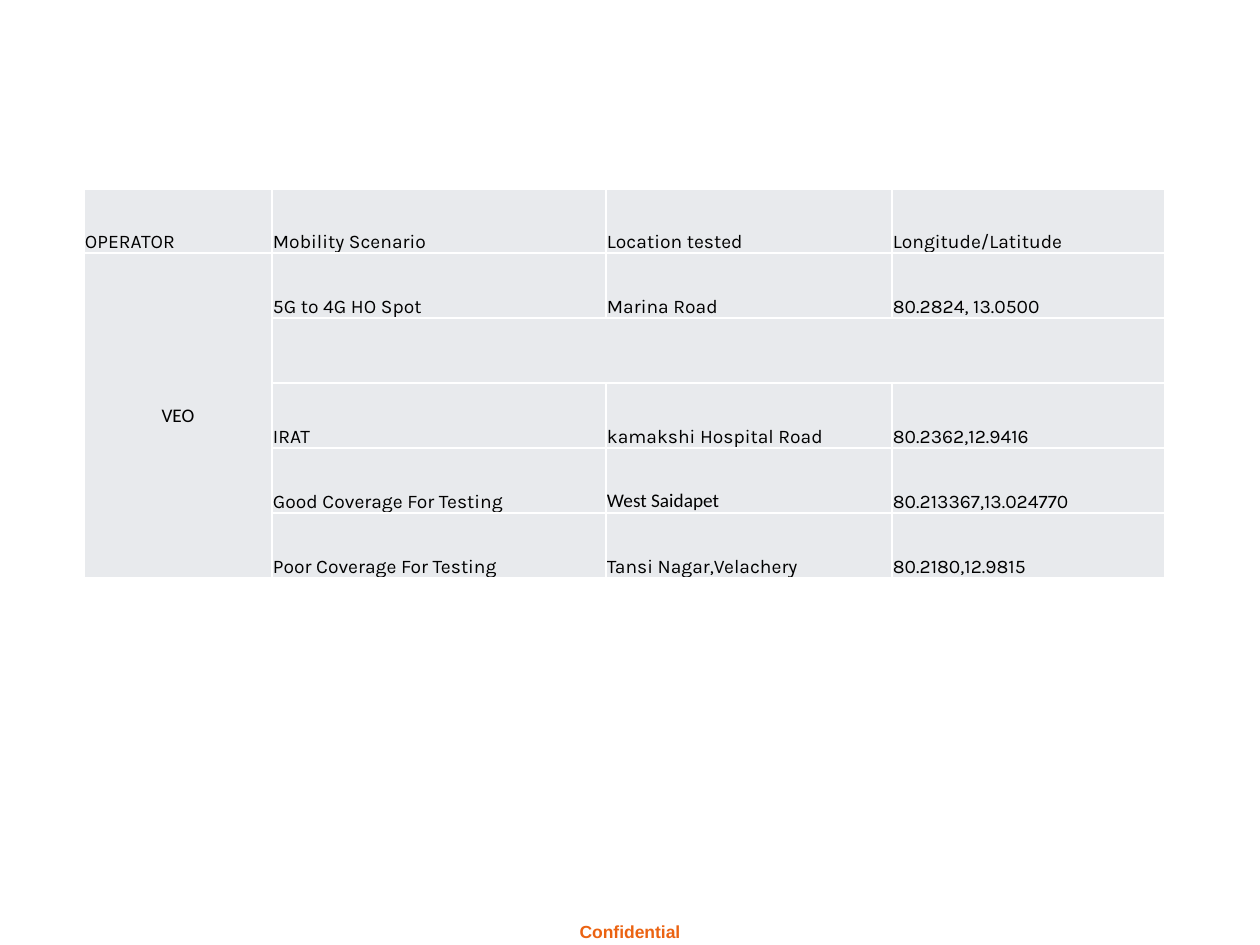
import pptx
import pptx.dml.color
import pptx.enum.text
import pptx.oxml
import pptx.oxml.ns
import pptx.util

SCALE = 914400 / 126
ALIGN = pptx.enum.text.PP_ALIGN
ANCHOR = pptx.enum.text.MSO_ANCHOR
COLS = [188, 334, 286, 273]
ROWS = [64, 65, 65, 65, 65, 65]
CELLS = [
    ["OPERATOR", "Mobility Scenario", "Location tested", "Longitude/Latitude"],
    ["VEO", "5G to 4G HO Spot", "Marina Road", "80.2824, 13.0500"],
    ["", "", "", ""],
    ["", "IRAT", "kamakshi Hospital Road", "80.2362,12.9416"],
    ["", "Good Coverage For Testing", "West Saidapet", "80.213367,13.024770"],
    ["", "Poor Coverage For Testing", "Tansi Nagar,Velachery", "80.2180,12.9815"],
]
PLAIN = {"VEO", "West Saidapet"}


def px(n):
    """Turn pixels into EMU."""
    return pptx.util.Emu(round(n * SCALE))


def tint(color, code):
    """Set a colour from a hex string."""
    color.rgb = pptx.dml.color.RGBColor.from_string(code)


def write(frame, text, font="Karla", size=11, code="000000", bold=False, align=ALIGN.LEFT):
    """Write one formatted paragraph into a text frame."""
    para = frame.paragraphs[0]
    para.alignment = align
    run = para.add_run()
    run.text = text
    run.font.name = font
    run.font.size = pptx.util.Pt(size)
    run.font.bold = bold
    tint(run.font.color, code)


def edge(cell, code="FFFFFF", width=12700):
    """Draw a solid border on all four sides of a cell."""
    props = cell._tc.get_or_add_tcPr()
    for spot, side in enumerate("LRTB"):
        line = pptx.oxml.parse_xml(
            f'<a:ln{side} {pptx.oxml.ns.nsdecls("a")} w="{width}"><a:solidFill>'
            f'<a:srgbClr val="{code}"/></a:solidFill></a:ln{side}>')
        props.insert(spot, line)


def style(cell):
    """Give a cell its fill, margins, anchor and border."""
    cell.fill.solid()
    tint(cell.fill.fore_color, "E8EAED")
    cell.margin_left = cell.margin_right = cell.margin_top = px(1)
    cell.margin_bottom = 0
    cell.vertical_anchor = ANCHOR.BOTTOM
    edge(cell)


def grid(slide, left, top):
    """Place the table of test locations."""
    table = slide.shapes.add_table(
        len(ROWS), len(COLS), px(left), px(top), px(sum(COLS)), px(sum(ROWS))).table
    table.first_row = table.horz_banding = False
    for col, width in zip(table.columns, COLS):
        col.width = px(width)
    for row, height, texts in zip(table.rows, ROWS, CELLS):
        row.height = px(height)
        for cell, text in zip(row.cells, texts):
            style(cell)
            if text:
                write(cell.text_frame, text, font="Calibri" if text in PLAIN else "Karla")
    name = table.cell(1, 0)
    name.merge(table.cell(5, 0))
    name.vertical_anchor = ANCHOR.MIDDLE
    name.text_frame.paragraphs[0].alignment = ALIGN.CENTER
    table.cell(2, 1).merge(table.cell(2, 3))


def foot(slide, left, top, width, height):
    """Place the footer line."""
    frame = slide.shapes.add_textbox(px(left), px(top), px(width), px(height)).text_frame
    frame.word_wrap = True
    frame.auto_size = pptx.enum.text.MSO_AUTO_SIZE.SHAPE_TO_FIT_TEXT
    write(frame, "Confidential", font="Arial", size=10, code="EB6312", bold=True,
          align=ALIGN.CENTER)


def main():
    """Build and save the slide."""
    deck = pptx.Presentation()
    deck.slide_width, deck.slide_height = px(1260), px(945)
    slide = deck.slides.add_slide(deck.slide_layouts[6])
    foot(slide, 0, 915, 1260, 34)
    grid(slide, 84, 189)
    deck.save("out.pptx")


if __name__ == "__main__":
    main()
